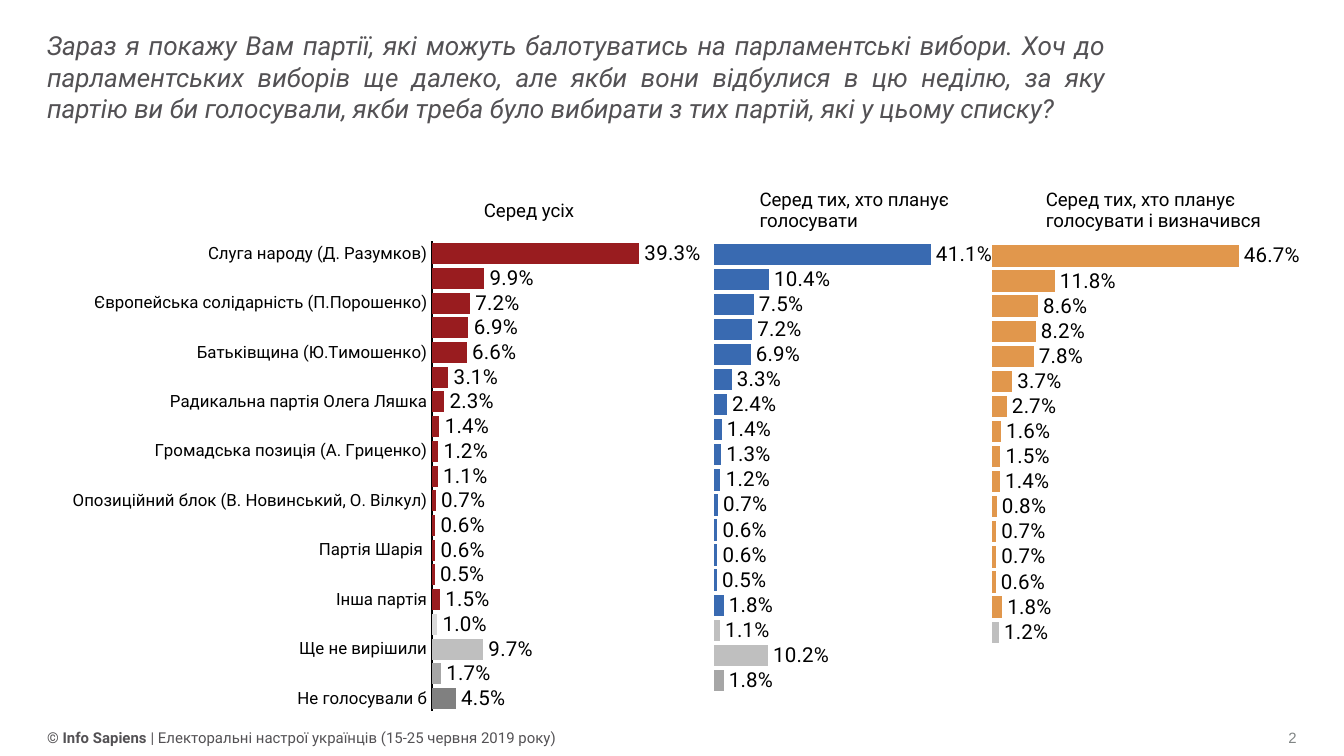
import lxml.etree
import pptx
import pptx.chart.data
import pptx.dml.color
import pptx.enum.chart
import pptx.enum.shapes
import pptx.enum.text
import pptx.oxml.ns
import pptx.util

Cm = pptx.util.Cm
Pt = pptx.util.Pt
ANCHOR = pptx.enum.text.MSO_ANCHOR
ALIGN = pptx.enum.text.PP_ALIGN

COLOURS = {
    "white": "FFFFFF", "black": "000000", "text": "535154", "number": "808585",
    "red": "991C1F", "blue": "396AB1", "orange": "E1974C",
    "pale": "D9D9D9", "light": "BFBFBF", "mid": "A6A6A6", "dark": "808080",
}

PARTIES = [
    "Слуга народу (Д. Разумков)",
    "Опозиційна платформа - За життя (Ю.Бойко, В.Рабінович)",
    "Європейська солідарність (П.Порошенко)",
    "Голос (C. Вакарчук)",
    "Батьківщина (Ю.Тимошенко)",
    "Сила і Честь (І.Смешко)",
    "Радикальна партія Олега Ляшка",
    "Українська Стратегія Гройсмана",
    "Громадська позиція (А. Гриценко)",
    "Свобода (О. Тягнибок, Д. Ярош, А. Білецький)",
    "Опозиційний блок (В. Новинський, О. Вілкул)",
    "Самопоміч (А. Садовий)",
    "Партія Шарія ",
    "Рух нових сил (М. Саакашвілі)",
    "Інша партія",
    "Зіпсували би бюлетень/Лишили б бюлетень пустим",
    "Ще не вирішили",
    "Не знаю/Відмова",
    "Не голосували б",
]
ALL_VOTERS = [0.393, 0.099, 0.072, 0.069, 0.066, 0.031, 0.023, 0.014, 0.012, 0.011,
              0.007, 0.006, 0.006, 0.005, 0.015, 0.01, 0.097, 0.017, 0.045]
LIKELY_VOTERS = [0.411, 0.104, 0.075, 0.072, 0.069, 0.033, 0.024, 0.014, 0.013, 0.012,
                 0.007, 0.006, 0.006, 0.005, 0.018, 0.011, 0.102, 0.018]
DECIDED_VOTERS = [0.467, 0.118, 0.086, 0.082, 0.078, 0.037, 0.027, 0.016, 0.015, 0.014,
                  0.008, 0.007, 0.007, 0.006, 0.018, 0.012]
FIRST_GREY = 15

QUESTION = (
    "Зараз я покажу Вам партії, які можуть балотуватись на парламентські вибори. "
    "Хоч до парламентських виборів ще далеко, але якби вони відбулися в цю неділю, "
    "за яку партію ви би голосували, якби треба було вибирати з тих партій, "
    "які у цьому списку?"
)
HEADINGS = [
    ("Серед усіх", 5.21),
    ("Серед тих, хто планує голосувати", 5.41),
    ("Серед тих, хто планує голосувати і визначився", 5.61),
]


def colour(name):
    return pptx.dml.color.RGBColor.from_string(COLOURS[name])


def assign(target, values):
    for name, value in values.items():
        setattr(target, name, value)


class SlideBuilder:
    font_name = "Roboto"

    def __init__(self, page):
        self.page = page

    def style(self, font, size, tint="black", **values):
        assign(font, {"name": self.font_name, "size": Pt(size), **values})
        font.color.rgb = colour(tint)

    def fill_text(self, box, spans, size, tint, align, anchor, top=0, **values):
        frame = box.text_frame
        assign(frame, {"word_wrap": True, "vertical_anchor": anchor, "margin_left": 0,
                       "margin_right": 0, "margin_top": Cm(top), "margin_bottom": 0})
        para = frame.paragraphs[0]
        para.alignment = align
        for text, bold in spans:
            span = para.add_run()
            span.text = text
            self.style(span.font, size, tint, bold=bold, **values)

    def question(self, text, left, top, width, height):
        box = self.page.shapes.add_textbox(Cm(left), Cm(top), Cm(width), Cm(height))
        self.fill_text(box, [(text, False)], 14, "text", ALIGN.JUSTIFY, ANCHOR.BOTTOM,
                       top=0.05, italic=True)

    def footer(self, spans, left, width, tint, align, **values):
        box = self.page.shapes.add_shape(
            pptx.enum.shapes.MSO_SHAPE.RECTANGLE, Cm(left), Cm(13.74), Cm(width), Cm(0.41))
        box.shadow.inherit = False
        box.fill.solid()
        box.fill.fore_color.rgb = colour("white")
        box.line.fill.background()
        self.fill_text(box, spans, 8, tint, align, ANCHOR.MIDDLE, **values)

    def heading_table(self, headings, left, top, height):
        width = sum(size for _, size in headings)
        table = self.page.shapes.add_table(
            1, len(headings), Cm(left), Cm(top), Cm(width), Cm(height)).table
        assign(table, {"first_row": False, "horz_banding": False})
        for index, (text, size) in enumerate(headings):
            table.columns[index].width = Cm(size)
            cell = table.cell(0, index)
            cell.fill.background()
            cell.vertical_anchor = ANCHOR.MIDDLE
            cell.text = text
            self.style(cell.text_frame.paragraphs[0].runs[0].font, 10, bold=False)

    def place_plot(self, chart, height):
        tag = pptx.oxml.ns.qn
        plot_area = chart.element.find(".//" + tag("c:plotArea"))
        for old in plot_area.findall(tag("c:layout")):
            plot_area.remove(old)
        layout = lxml.etree.Element(tag("c:layout"))
        manual = lxml.etree.SubElement(layout, tag("c:manualLayout"))
        settings = {"layoutTarget": "inner", "xMode": "edge", "yMode": "edge",
                    "x": 0.451, "y": 0, "w": 0.495, "h": height}
        for name, value in settings.items():
            lxml.etree.SubElement(manual, tag("c:" + name)).set("val", str(value))
        plot_area.insert(0, layout)

    def bar_chart(self, names, values, tint, greys, left, top, height, plot_height,
                  show_names=False):
        data = pptx.chart.data.CategoryChartData(number_format="0.0%")
        data.categories = names
        data.add_series("Series 1", values)
        chart = self.page.shapes.add_chart(
            pptx.enum.chart.XL_CHART_TYPE.BAR_CLUSTERED,
            Cm(left), Cm(top), Cm(18.11), Cm(height), data).chart
        assign(chart, {"has_legend": False, "has_title": False})
        self.style(chart.font, 11)

        assign(chart.value_axis, {"visible": False, "has_major_gridlines": False,
                                  "minimum_scale": 0, "maximum_scale": 0.9})
        axis = chart.category_axis
        no_tick = pptx.enum.chart.XL_TICK_MARK.NONE
        assign(axis, {"visible": show_names, "reverse_order": True,
                      "major_tick_mark": no_tick, "minor_tick_mark": no_tick})
        if show_names:
            self.style(axis.tick_labels.font, 9)
            axis.format.line.color.rgb = colour("black")
            axis.format.line.width = Pt(0.75)

        plot = chart.plots[0]
        assign(plot, {"gap_width": 18, "overlap": -91, "vary_by_categories": False,
                      "has_data_labels": True})
        assign(plot.data_labels, {
            "show_value": True, "number_format": "0.0%", "number_format_is_linked": False,
            "position": pptx.enum.chart.XL_LABEL_POSITION.OUTSIDE_END})
        self.style(plot.data_labels.font, 11)

        series = plot.series[0]
        series.invert_if_negative = False
        fills = [(series, tint)]
        fills += [(series.points[FIRST_GREY + i], grey) for i, grey in enumerate(greys)]
        for item, name in fills:
            item.format.fill.solid()
            item.format.fill.fore_color.rgb = colour(name)
        self.place_plot(chart, plot_height)


def main():
    deck = pptx.Presentation()
    assign(deck, {"slide_width": Cm(25.4), "slide_height": Cm(14.29)})
    builder = SlideBuilder(deck.slides.add_slide(deck.slide_layouts[6]))

    builder.footer([("2", False)], 20.9, 3.61, "number", ALIGN.RIGHT, name="Arial")
    builder.footer(
        [("© ", False), ("Info Sapіens ", True),
         ("| Електоральні настрої українців (15-25 червня 2019 року)", False)],
        0.89, 19.61, "text", ALIGN.LEFT)
    builder.bar_chart(PARTIES, ALL_VOTERS, "red", ["pale", "light", "mid", "dark"],
                      0, 4.55, 9.07, 0.98, show_names=True)
    builder.question(QUESTION, 0.89, 0.46, 20.02, 1.88)
    builder.heading_table(HEADINGS, 8.89, 3.43, 1.09)
    for values, tint, greys, left, top, height in [
        (LIKELY_VOTERS, "blue", ["light", "light", "mid"], 5.33, 4.57, 8.53),
        (DECIDED_VOTERS, "orange", ["light"], 10.59, 4.6, 7.59),
    ]:
        numbers = [str(number) for number in range(1, len(values) + 1)]
        builder.bar_chart(numbers, values, tint, greys, left, top, height, 1)

    deck.save("out.pptx")


if __name__ == "__main__":
    main()
